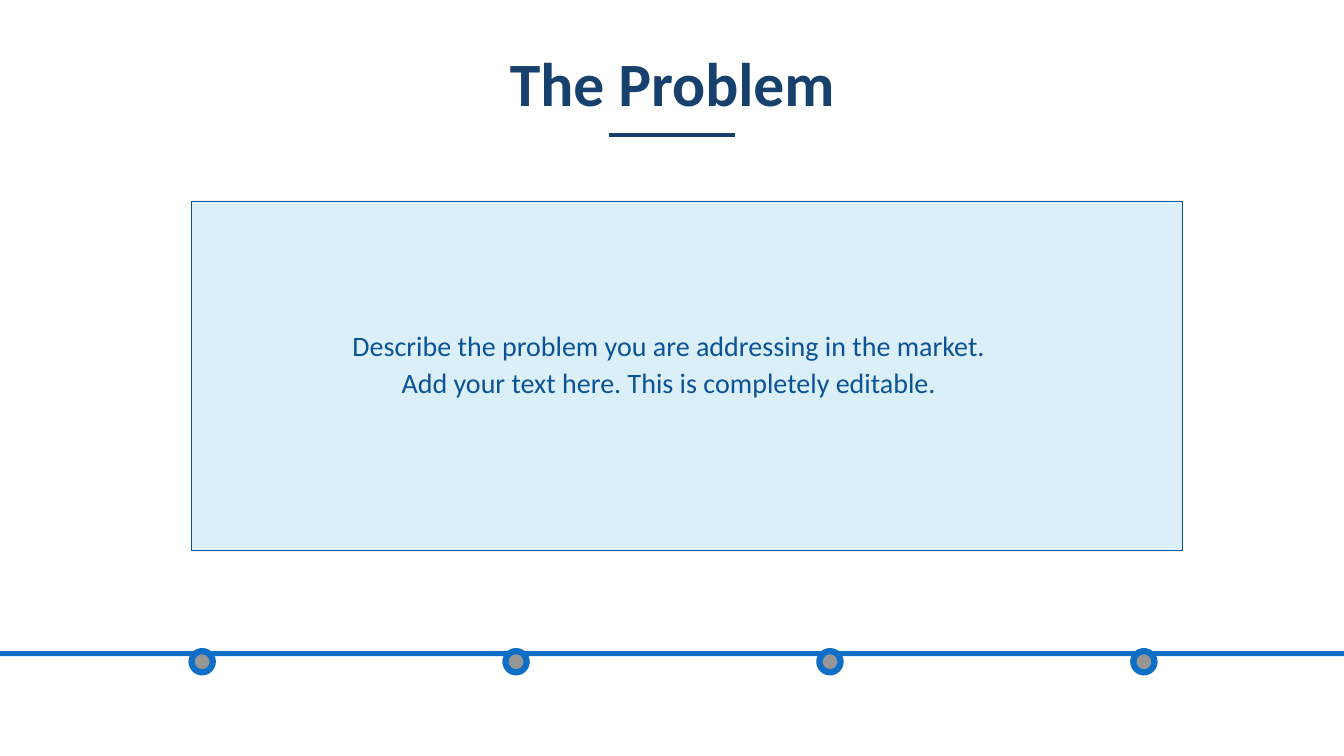
from lxml import etree
from pptx import Presentation
from pptx import util as u
from pptx.dml.color import RGBColor
from pptx.enum import shapes, text
from pptx.oxml.ns import qn

TITLE = "The Problem"
DESCRIPTION = [
    "Describe the problem you are addressing in the market. ",
    "Add your text here. This is completely editable. ",
]
FONT = "Calibri"
NAVY, BLUE, TEXT_BLUE, EDGE = "17406D", "0F6FC6", "0B5395", "0B5292"
PALE, GREY = "DBEFF9", "969696"

WIDTH, HEIGHT = 13.33, 7.5
LEFT = 1.9
TIMELINE_TOP = 6.46
DOT_COUNT, DOT_SIZE, LAST_DOT = 4, 0.21, 11.24
RULE_LENGTH, RULE_TOP = 1.25, 1.34

prs = Presentation()
prs.slide_width, prs.slide_height = u.Inches(WIDTH), u.Inches(HEIGHT)
slide = prs.slides.add_slide(prs.slide_layouts[6])


def color(hex_code):
    return RGBColor.from_string(hex_code)


def add_block(kind, box, fill, edge=None, edge_width=1):
    block = slide.shapes.add_shape(kind, *map(u.Inches, box))
    block.shadow.inherit = False
    block.fill.solid()
    block.fill.fore_color.rgb = color(fill)
    if edge:
        block.line.color.rgb = color(edge)
        block.line.width = u.Pt(edge_width)
    else:
        block.line.fill.background()


def add_text(box, lines, size, hex_code, spacing, margins, bold=False):
    """Add centred lines, one paragraph each; margins are (sides, top and bottom)."""
    frame = slide.shapes.add_textbox(*map(u.Inches, box)).text_frame
    frame.word_wrap = True
    frame.margin_left = frame.margin_right = u.Inches(margins[0])
    frame.margin_top = frame.margin_bottom = u.Inches(margins[1])
    frame.text = "\n".join(lines)
    for paragraph in frame.paragraphs:
        paragraph.alignment = text.PP_ALIGN.CENTER
        paragraph.line_spacing = spacing
        font = paragraph.runs[0].font
        font.name, font.size, font.bold = FONT, u.Pt(size), bold
        font.color.rgb = color(hex_code)
    return frame


RECTANGLE, OVAL = shapes.MSO_SHAPE.RECTANGLE, shapes.MSO_SHAPE.OVAL

add_block(RECTANGLE, (LEFT, 2, 9.83, 3.46), PALE, EDGE)
title = add_text((0.57, 0.5, 12.2, 0.72), [TITLE], 44, NAVY, 0.9, (0, 0), bold=True)
title.vertical_anchor = text.MSO_ANCHOR.MIDDLE
description = add_text((2.96, 3.18, 7.41, 0.82), DESCRIPTION, 20, TEXT_BLUE, 1.1, (0.03, 0.05))
description.auto_size = text.MSO_AUTO_SIZE.SHAPE_TO_FIT_TEXT

add_block(RECTANGLE, (0, TIMELINE_TOP, WIDTH, 0.05), BLUE)
dot_step = (LAST_DOT - LEFT) / (DOT_COUNT - 1)
for i in range(DOT_COUNT):
    add_block(OVAL, (LEFT + i * dot_step, TIMELINE_TOP, DOT_SIZE, DOT_SIZE), GREY, BLUE, 4.5)

rule_left = (WIDTH - RULE_LENGTH) / 2
rule = slide.shapes.add_connector(
    shapes.MSO_CONNECTOR.STRAIGHT,
    *map(u.Inches, (rule_left, RULE_TOP, rule_left + RULE_LENGTH, RULE_TOP)))
rule.line.color.rgb = color(NAVY)
rule.line.width = u.Pt(3)
etree.SubElement(rule._element.spPr, qn("a:effectLst"))

prs.save("out.pptx")
